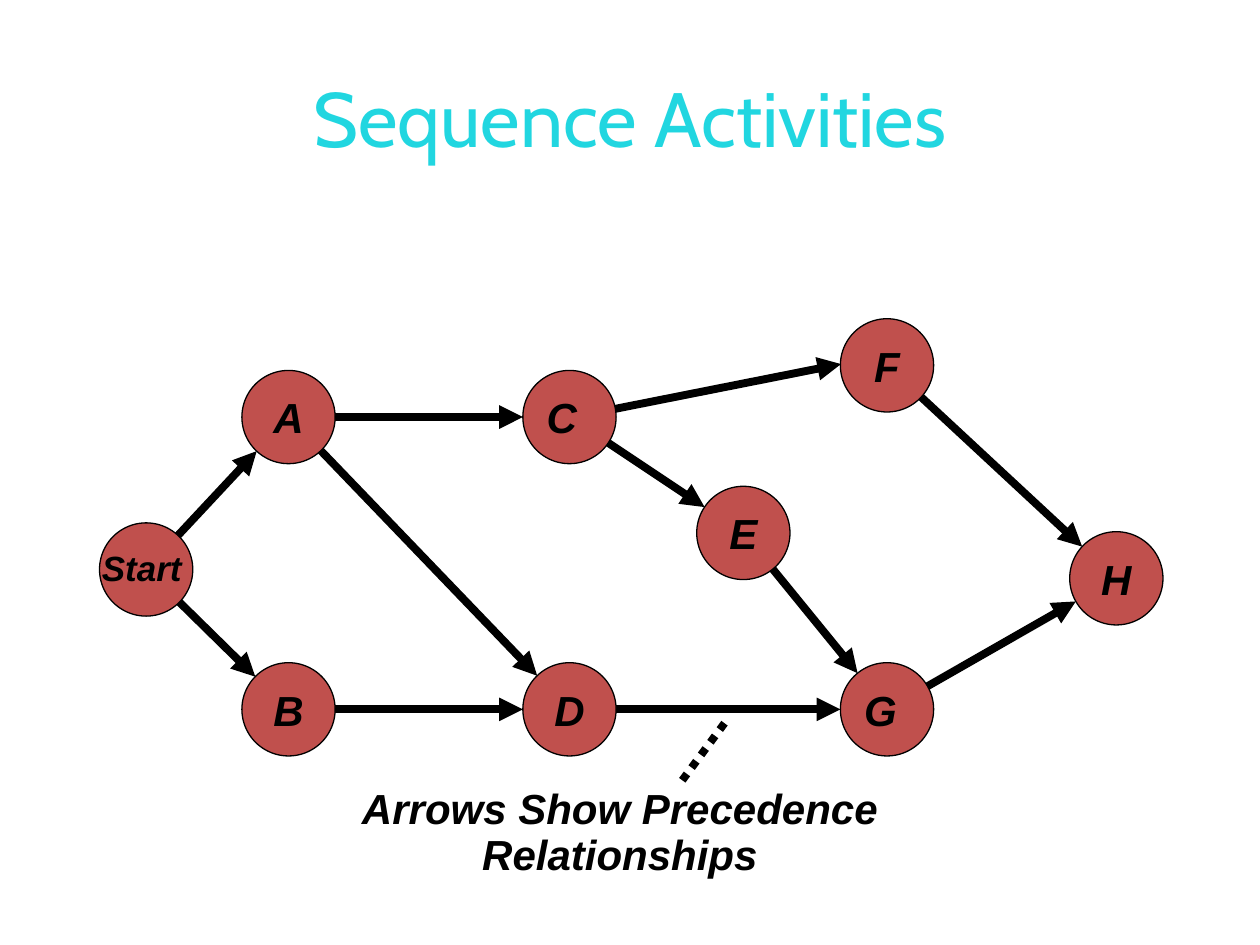
from dataclasses import dataclass
from math import hypot

from lxml import etree
from pptx import Presentation
from pptx import util as u
from pptx.dml.color import RGBColor
from pptx.enum import dml, shapes, text
from pptx.oxml.ns import qn


@dataclass(frozen=True)
class Theme:
    ink: RGBColor = RGBColor(0, 0, 0)
    node: RGBColor = RGBColor(0xC0, 0x50, 0x4D)
    head: RGBColor = RGBColor(0x21, 0xD6, 0xE0)
    body_font: str = "Arial"
    head_font: str = "Cabin"
    head_size: int = 44
    body_size: int = 24
    small_size: int = 20
    thick: float = 4.5
    thin: float = 0.75


SIZE = 0.74
RADIUS = SIZE / 2
TUCK = 0.2  # arrows start this far from a centre, under the circle

# Left and top of each circle
NODES = {
    "Start": (0.79, 4.15),
    "A": (1.92, 2.94),
    "B": (1.92, 5.26),
    "C": (4.15, 2.94),
    "D": (4.15, 5.26),
    "E": (5.53, 3.86),
    "F": (6.67, 2.53),
    "G": (6.67, 5.26),
    "H": (8.49, 4.22),
}
# From, to, and rise of the arrow tip
LINKS = [
    ("Start", "A", 0), ("Start", "B", 0), ("A", "C", 0), ("A", "D", 0),
    ("B", "D", 0), ("C", "F", 0.07), ("C", "E", 0), ("D", "G", 0),
    ("E", "G", 0), ("F", "H", 0), ("G", "H", 0),
]
# Offset in the circle, and width, of labels set from the left
LEFT_LABELS = {
    "Start": (-0.08, 0.14, 1.04),
    "C": (0.09, 0.12, 0.56),
    "G": (0.09, 0.12, 0.56),
}


class Painter:
    """Draws styled elements on the current slide."""

    def __init__(self, slide, theme):
        self.slide, self.theme = slide, theme

    def title(self, words, left, top, width, height):
        box = self.slide.shapes.title
        box.left, box.top = u.Inches(left), u.Inches(top)
        box.width, box.height = u.Inches(width), u.Inches(height)
        box.text_frame.text = words
        box.text_frame.vertical_anchor = text.MSO_ANCHOR.MIDDLE
        para = box.text_frame.paragraphs[0]
        para.alignment = text.PP_ALIGN.CENTER
        para.font.name = self.theme.head_font
        para.font.size = u.Pt(self.theme.head_size)
        para.font.color.rgb = self.theme.head

    def line(self, start, end, arrow=True):
        """Draw a solid arrow, or a dotted line without a head."""
        ends = [u.Inches(n) for n in (*start, *end)]
        link = self.slide.shapes.add_connector(
            shapes.MSO_CONNECTOR.STRAIGHT, *ends)
        link.line.color.rgb = self.theme.ink
        link.line.width = u.Pt(self.theme.thick)
        if arrow:
            tip = etree.SubElement(link.line._get_or_add_ln(), qn("a:tailEnd"))
            tip.set("type", "triangle")
        else:
            link.line.dash_style = dml.MSO_LINE.ROUND_DOT
        etree.SubElement(link._element.spPr, qn("a:effectLst"))

    def circle(self, left, top):
        disc = self.slide.shapes.add_shape(
            shapes.MSO_SHAPE.OVAL, u.Inches(left), u.Inches(top),
            u.Inches(SIZE), u.Inches(SIZE))
        disc.shadow.inherit = False
        disc.fill.solid()
        disc.fill.fore_color.rgb = self.theme.node
        disc.line.color.rgb = self.theme.ink
        disc.line.width = u.Pt(self.theme.thin)

    def label(self, words, left, top, width, height, size,
              align=text.PP_ALIGN.CENTER, wrap=True, space=1.0):
        box = self.slide.shapes.add_textbox(
            u.Inches(left), u.Inches(top), u.Inches(width), u.Inches(height))
        frame = box.text_frame
        frame.word_wrap = wrap
        frame.text = words
        para = frame.paragraphs[0]
        para.alignment = align
        para.line_spacing = space
        font = para.font
        font.name, font.size = self.theme.body_font, u.Pt(size)
        font.bold = font.italic = True
        font.color.rgb = self.theme.ink

    def node(self, name, left, top):
        self.circle(left, top)
        if name in LEFT_LABELS:
            right, down, width = LEFT_LABELS[name]
            align = text.PP_ALIGN.LEFT
        else:
            right, down, width = 0.15, 0.12, 0.44
            align = text.PP_ALIGN.CENTER
        short = len(name) == 1
        size = self.theme.body_size if short else self.theme.small_size
        self.label(name, left + right, top + down, width,
                   0.5 if short else 0.44, size, align, wrap=False)

    def link(self, first, last, rise):
        """Join two circles along the line between their centres."""
        (x1, y1), (x2, y2) = [
            (x + RADIUS, y + RADIUS) for x, y in (NODES[first], NODES[last])]
        span = hypot(x2 - x1, y2 - y1)
        dx, dy = (x2 - x1) / span, (y2 - y1) / span
        self.line((x1 + TUCK * dx, y1 + TUCK * dy),
                  (x2 - RADIUS * dx, y2 - RADIUS * dy - rise))


def main():
    deck = Presentation()
    deck.slide_width, deck.slide_height = u.Inches(10), u.Inches(7.5)
    theme = Theme()
    pen = Painter(deck.slides.add_slide(deck.slide_layouts[5]), theme)
    pen.title("Sequence Activities", 0.5, 0.3, 9, 1.25)
    for link in LINKS:
        pen.link(*link)
    for name, place in NODES.items():
        pen.node(name, *place)
    pen.label("Arrows Show Precedence Relationships",
              2.75, 6.21, 4.34, 0.82, theme.body_size, space=0.9)
    pen.line((5.75, 5.74), (5.38, 6.24), arrow=False)
    deck.save("out.pptx")


if __name__ == "__main__":
    main()
